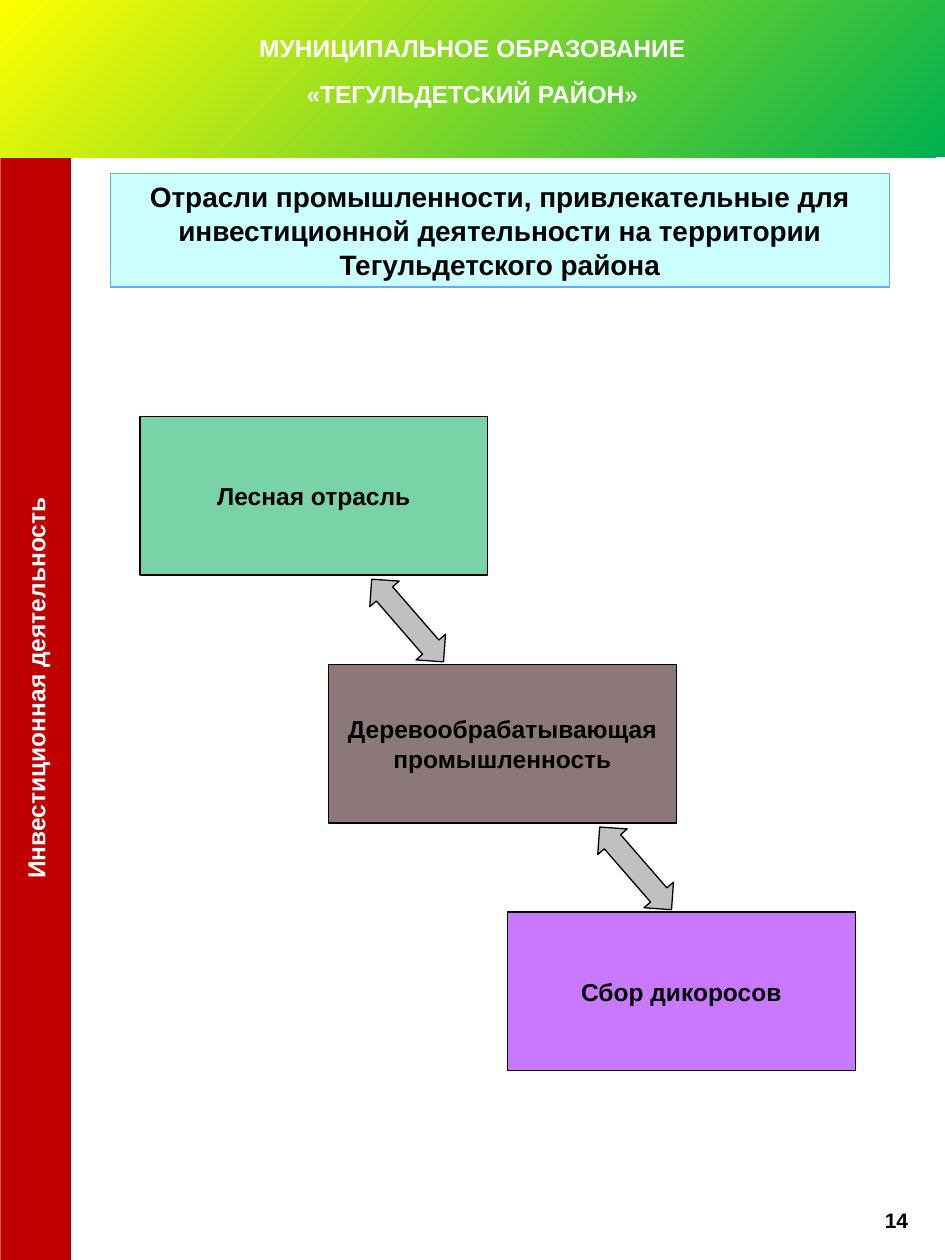
import pptx
import pptx.dml.color
import pptx.enum.shapes
import pptx.enum.text
import pptx.util

Pt = pptx.util.Pt
Kind = pptx.enum.shapes.MSO_SHAPE


def tint(code):
    """Turn a hex string into a colour."""
    return pptx.dml.color.RGBColor.from_string(code)


def draw(slide, kind, place, fill, line=None, turn=0):
    """Draw a preset shape without a shadow."""
    shape = slide.shapes.add_shape(kind, *map(Pt, place))
    shape.shadow.inherit = False
    shape.rotation = turn
    shape.fill.solid()
    shape.fill.fore_color.rgb = tint(fill)
    if line:
        shape.line.color.rgb = tint(line)
        shape.line.width = Pt(0.75)
    else:
        shape.line.fill.background()
    return shape


def write(shape, lines, size=14, color="000000", gap=0):
    """Write bold centred lines in the middle of a shape."""
    frame = shape.text_frame
    frame.word_wrap = True
    frame.vertical_anchor = pptx.enum.text.MSO_ANCHOR.MIDDLE
    for index, line in enumerate(lines):
        para = frame.add_paragraph() if index else frame.paragraphs[0]
        para.text = line
        para.alignment = pptx.enum.text.PP_ALIGN.CENTER
        if index:
            para.space_before = Pt(gap)
        para.font.name = "Arial"
        para.font.size = Pt(size)
        para.font.bold = True
        para.font.color.rgb = tint(color)


def banner(slide, lines):
    """Draw the top band with its gradient and heading."""
    band = draw(slide, Kind.RECTANGLE, (0, 0, 540, 90), "00B050")
    band.fill.gradient()
    band.fill.gradient_angle = 135
    for stop, code in zip(band.fill.gradient_stops, ("00B050", "FFFF00")):
        stop.color.rgb = tint(code)
    write(band, lines, color="FFFFFF", gap=9.3)
    band.text_frame.vertical_anchor = pptx.enum.text.MSO_ANCHOR.TOP
    band.text_frame.margin_top = Pt(19)


def steps(slide, items):
    """Draw the falling row of boxes joined by arrows."""
    top, pitch = 238, 141.6
    for index, (left, fill, text) in enumerate(items):
        place = (left, top + index * pitch, 198.7, 90.7)
        box = draw(slide, Kind.RECTANGLE, place, fill, "000000")
        write(box, [text])
    for index, left in enumerate((221.8, 352.1)):
        place = (left, top + 85.3 + index * pitch, 22.3, 62.6)
        arrow = draw(slide, Kind.UP_DOWN_ARROW, place, "C0C0C0", "000000", 319)
        arrow.adjustments[0] = 0.5
        arrow.adjustments[1] = 0.555


def main():
    """Build the slide and save it."""
    deck = pptx.Presentation()
    deck.slide_width, deck.slide_height = Pt(540), Pt(720)
    slide = deck.slides.add_slide(deck.slide_layouts[6])
    side = draw(slide, Kind.RECTANGLE, (-306.8, 373, 654.4, 40.3), "C00000", turn=270)
    write(side, ["Инвестиционная деятельность"], color="FFFFFF")
    page = slide.shapes.add_textbox(Pt(496.8), Pt(686.2), Pt(31), Pt(21.6))
    write(page, ["14"], size=12)
    steps(slide, [
        (80, "79D3A6", "Лесная отрасль"),
        (187.8, "8C7878", "Деревообрабатывающая промышленность"),
        (290, "C979FF", "Сбор дикоросов"),
    ])
    title = draw(slide, Kind.RECTANGLE, (63.1, 99.2, 445.2, 64.8), "CCFFFF", "5EAEFF")
    write(title, ["Отрасли промышленности, привлекательные для инвестиционной "
                  "деятельности на территории Тегульдетского района"], size=16)
    banner(slide, ["МУНИЦИПАЛЬНОЕ ОБРАЗОВАНИЕ", "«ТЕГУЛЬДЕТСКИЙ РАЙОН»"])
    deck.save("out.pptx")


if __name__ == "__main__":
    main()
